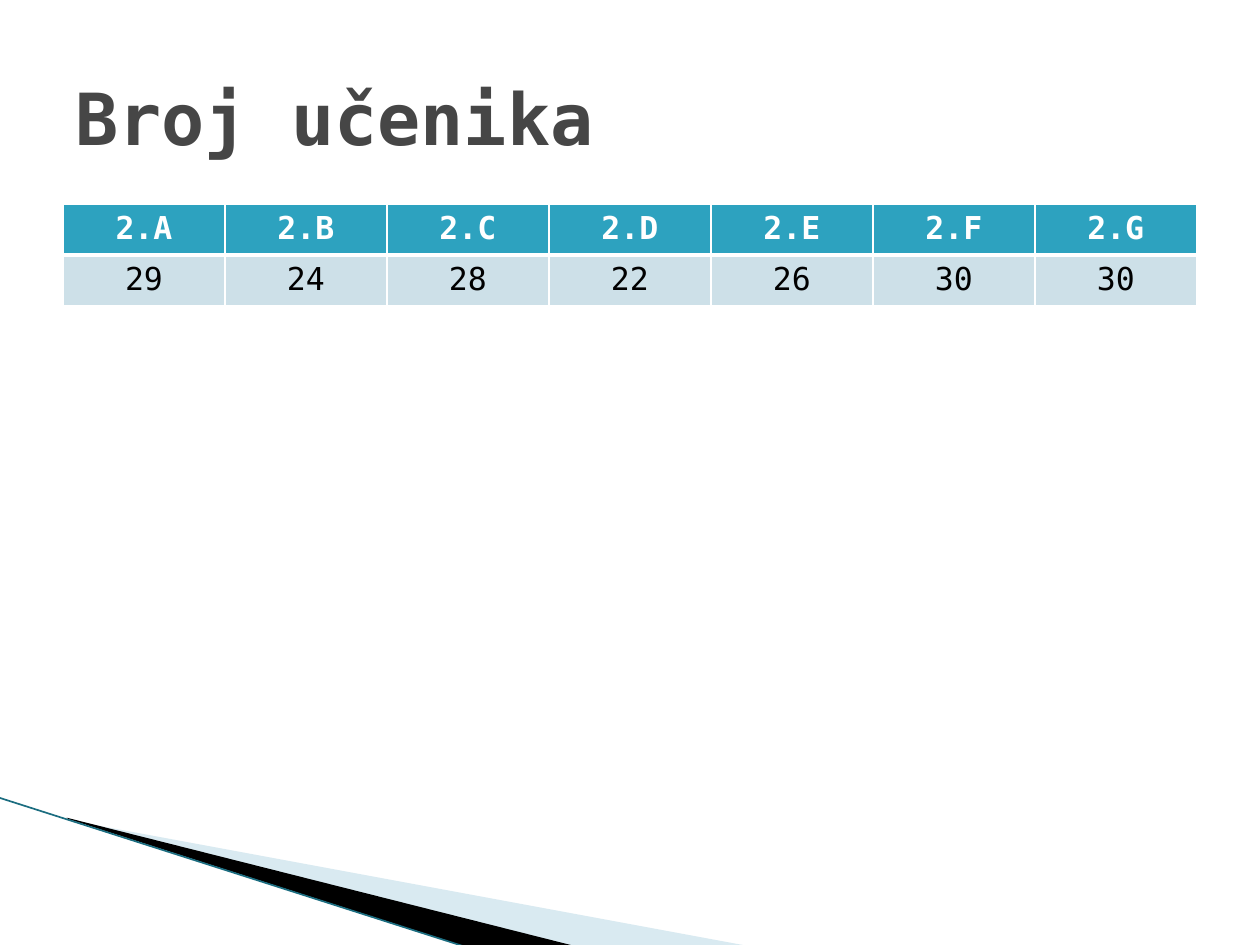
from lxml import etree
from pptx import Presentation
from pptx.dml.color import RGBColor
from pptx.enum.shapes import MSO_CONNECTOR
from pptx.enum.text import MSO_ANCHOR, PP_ALIGN
from pptx.oxml.ns import qn
from pptx.util import Inches, Pt

COLORS = {
    "title": "464646", "header": "2DA2BF", "body": "CDE0E8", "white": "FFFFFF",
    "black": "000000", "pale": "A0CBDC", "line": "1B6D80",
}


def rgb(name):
    return RGBColor.from_string(COLORS[name])


def add_run(p, text, color, **fmt):
    r = p.add_run()
    r.text = text
    r.font.color.rgb = rgb(color)
    for key, value in {"name": "DejaVu Sans Mono", **fmt}.items():
        setattr(r.font, key, value)


prs = Presentation()
prs.slide_width, prs.slide_height = Inches(10), Inches(7.5)
s = prs.slides.add_slide(prs.slide_layouts[6])

wedges = [
    ("pale", 40, (0.78, 5.47, 4.16, 1.58),
     [(0.55, 6.51), (5.95, 7.51), (4.56, 7.51), (0.55, 6.5)]),
    ("black", 100, (-0.06, 6.33, 4.16, 0.92),
     [(0.53, 6.49), (4.57, 7.51), (3.72, 7.52), (0.54, 6.5)]),
]
for color, opacity, frame, points in wedges:
    points = [(Inches(x), Inches(y)) for x, y in points]
    builder = s.shapes.build_freeform(*points[0])
    builder.add_line_segments(points[1:], close=True)
    sp = builder.convert_to_shape()
    sp.left, sp.top, sp.width, sp.height = map(Inches, frame)
    outline = next(sp._element.iter(qn("a:path")))
    outline.set("w", str(sp.width))
    outline.set("h", str(sp.height))
    for pt, (x, y) in zip(outline.iter(qn("a:pt")), points):
        pt.set("x", str(x - sp.left))
        pt.set("y", str(y - sp.top))
    sp.shadow.inherit = False
    sp.fill.solid()
    sp.fill.fore_color.rgb = rgb(color)
    sp.line.fill.background()
    if opacity < 100:
        clr = sp.fill._xPr.find(qn("a:solidFill"))[0]
        etree.SubElement(clr, qn("a:alpha"), val=str(opacity * 1000))

edge = s.shapes.add_connector(
    MSO_CONNECTOR.STRAIGHT, Inches(-0.01), Inches(6.33), Inches(3.71), Inches(7.52))
edge.line.color.rgb = rgb("line")
edge.line.width = Pt(0.95)
etree.SubElement(edge._element.spPr, qn("a:effectLst"))

rows = [
    (["2.A", "2.B", "2.C", "2.D", "2.E", "2.F", "2.G"], "header", "white", True,
     {"L": 1, "R": 1, "T": 1, "B": 3}),
    (["29", "24", "28", "22", "26", "30", "30"], "body", "black", False,
     {"L": 1, "R": 1, "T": 3, "B": 1}),
]
table = s.shapes.add_table(
    2, 7, Inches(0.5), Inches(1.62), Inches(9), Inches(0.81)).table
for i, (values, fill, color, bold, borders) in enumerate(rows):
    for j, value in enumerate(values):
        cell = table.cell(i, j)
        tcPr = cell._tc.get_or_add_tcPr()
        for side, width in borders.items():
            ln = etree.SubElement(tcPr, qn(f"a:ln{side}"), w=str(Pt(width)))
            solid = etree.SubElement(ln, qn("a:solidFill"))
            etree.SubElement(solid, qn("a:srgbClr"), val=COLORS["white"])
        cell.fill.solid()
        cell.fill.fore_color.rgb = rgb(fill)
        p = cell.text_frame.paragraphs[0]
        p.alignment = PP_ALIGN.CENTER
        add_run(p, value, color, size=Pt(18), bold=bold)

title = s.shapes.add_textbox(Inches(0.5), Inches(0.3), Inches(9), Inches(1.25))
tf = title.text_frame
tf.word_wrap = True
tf.vertical_anchor = MSO_ANCHOR.MIDDLE
add_run(tf.paragraphs[0], "Broj učenika", "title", size=Pt(41), bold=True)

prs.save("out.pptx")
